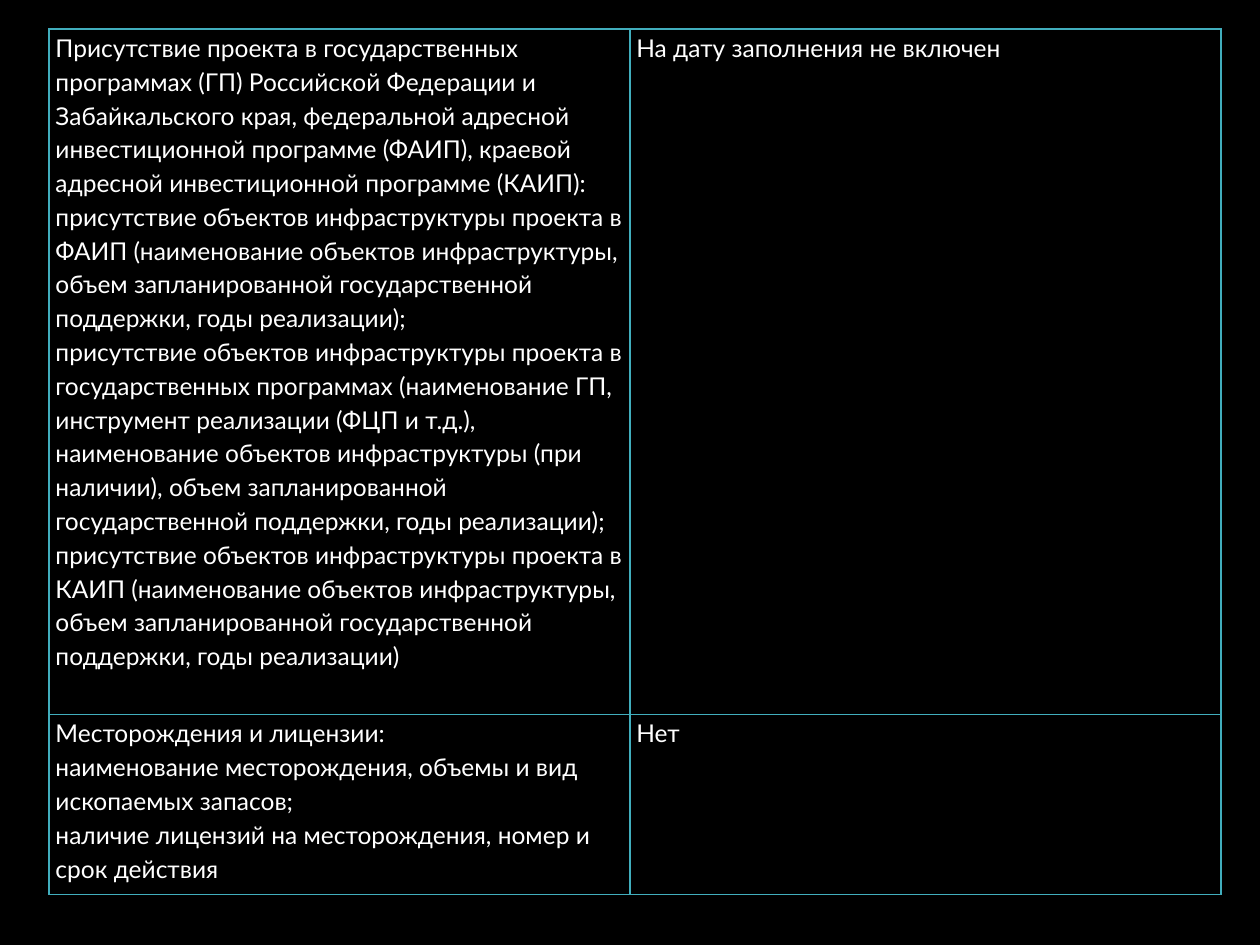
import pptx
import pptx.dml.color
import pptx.util
from lxml import etree
from pptx.oxml.ns import qn

Inches = pptx.util.Inches
Pt = pptx.util.Pt


def paint(fill, color):
    fill.solid()
    fill.fore_color.rgb = pptx.dml.color.RGBColor.from_string(color)


def frame(cell, color, width):
    """Draw all four borders; call before the cell gets its fill."""
    props = cell._tc.get_or_add_tcPr()
    for side in ("lnL", "lnR", "lnT", "lnB"):
        line = etree.SubElement(props, qn("a:" + side), w=str(Pt(width)))
        solid = etree.SubElement(line, qn("a:solidFill"))
        etree.SubElement(solid, qn("a:srgbClr"), val=color)


rows = [
    (
        [
            "Присутствие проекта в государственных программах (ГП) Российской "
            "Федерации и Забайкальского края, федеральной адресной инвестиционной "
            "программе (ФАИП), краевой адресной инвестиционной программе (КАИП):",
            "присутствие объектов инфраструктуры проекта в ФАИП (наименование "
            "объектов инфраструктуры, объем запланированной государственной "
            "поддержки, годы реализации);",
            "присутствие объектов инфраструктуры проекта в государственных "
            "программах (наименование ГП, инструмент реализации (ФЦП и т.д.), "
            "наименование объектов инфраструктуры (при наличии), объем "
            "запланированной государственной поддержки, годы реализации);",
            "присутствие объектов инфраструктуры проекта в КАИП (наименование "
            "объектов инфраструктуры, объем запланированной государственной "
            "поддержки, годы реализации)",
        ],
        ["На дату заполнения не включен"],
    ),
    (
        [
            "Месторождения и лицензии:",
            "наименование месторождения, объемы и вид ископаемых запасов;",
            "наличие лицензий на месторождения, номер и срок действия",
        ],
        ["Нет"],
    ),
]
widths = [4.61, 4.69]
heights = [5.44, 1.43]

deck = pptx.Presentation()
deck.slide_width = Inches(10)
deck.slide_height = Inches(7.5)
slide = deck.slides.add_slide(deck.slide_layouts[6])
paint(slide.background.fill, "000000")

table = slide.shapes.add_table(
    len(rows), len(widths), Inches(0.39), Inches(0.23),
    Inches(sum(widths)), Inches(sum(heights)),
).table
table.first_row = False
table.horz_banding = False
for col, width in zip(table.columns, widths):
    col.width = Inches(width)
for row, height in zip(table.rows, heights):
    row.height = Inches(height)

for row, texts in zip(table.rows, rows):
    for cell, lines in zip(row.cells, texts):
        frame(cell, "41AEBD", 1)
        paint(cell.fill, "000000")
        cell.margin_left = cell.margin_right = Inches(0.05)
        cell.margin_top = cell.margin_bottom = 0
        cell.text = "\n".join(lines)
        for para in cell.text_frame.paragraphs:
            para.line_spacing = 1.15
            para.font.name = "Lato"
            para.font.size = Pt(14)
            paint(para.font.fill, "FFFFFF")

deck.save("out.pptx")
